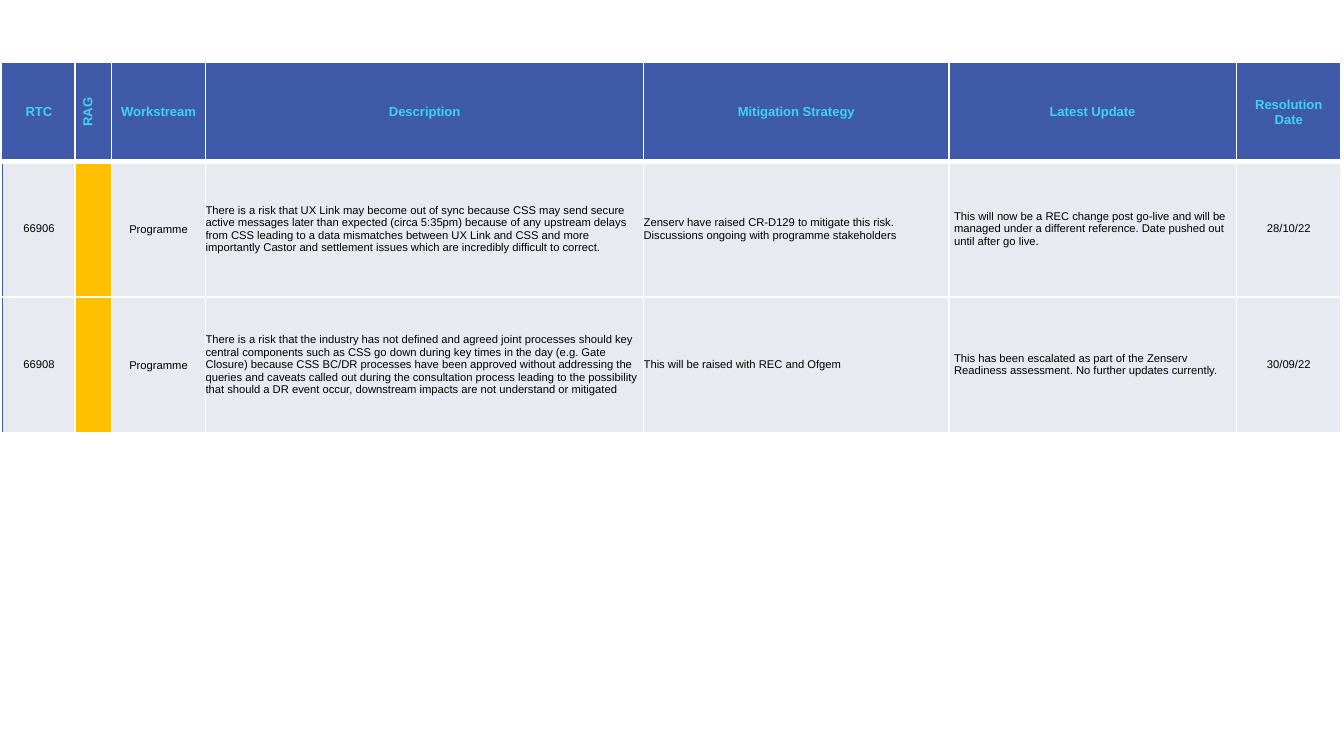
from lxml import etree
from pptx import Presentation
from pptx import util as u
from pptx.dml.color import RGBColor
from pptx.enum import text as t
from pptx.oxml import ns

COLORS = {"header": "3E5AA8", "heading": "40D1F5", "body": "E8EAF1",
          "amber": "FFC000", "ink": "000000", "rule": "FFFFFF"}

# heading, width, alignment of body text, body margins (left, top, right, bottom)
CENTER, LEFT = t.PP_ALIGN.CENTER, t.PP_ALIGN.LEFT
FLUSH, PADDED = (0, 0, 0, 0), (0.04, 0.04, 0.04, 0.04)
COLUMNS = [
    ("RTC", 0.54, CENTER, FLUSH),
    ("RAG", 0.27, CENTER, FLUSH),
    ("Workstream", 0.70, CENTER, (0.01, 0.01, 0.01, 0)),
    ("Description", 3.26, LEFT, FLUSH),
    ("Mitigation Strategy", 2.27, LEFT, FLUSH),
    ("Latest Update", 2.14, LEFT, PADDED),
    ("Resolution\nDate", 0.78, CENTER, FLUSH),
]
RAG = 1
RISKS = [
    ("66906", "", "Programme",
     "There is a risk that UX Link may become out of sync because CSS may send secure "
     "active messages later than expected (circa 5:35pm) because of any upstream delays "
     "from CSS leading to a data mismatches between UX Link and CSS and more importantly "
     "Castor and settlement issues which are incredibly difficult to correct.",
     "Zenserv have raised CR-D129 to mitigate this risk.\n"
     "Discussions ongoing with programme stakeholders",
     "This will now be a REC change post go-live and will be managed under a different "
     "reference. Date pushed out until after go live.",
     "28/10/22"),
    ("66908", "", "Programme",
     "There is a risk that the industry has not defined and agreed joint processes should "
     "key central components such as CSS go down during key times in the day (e.g. Gate "
     "Closure) because CSS BC/DR processes have been approved without addressing the "
     "queries and caveats called out during the consultation process leading to the "
     "possibility that should a DR event occur, downstream impacts are not understand or "
     "mitigated",
     "This will be raised with REC and Ofgem",
     "This has been escalated as part of the Zenserv Readiness assessment. No further "
     "updates currently.",
     "30/09/22"),
]
SLIDE_WIDTH = 10
SLIDE_HEIGHT = SLIDE_WIDTH * 9 / 16
HEADER_HEIGHT, RISK_HEIGHT = 0.73, 1.01


def write(cell, words, size=6, color="ink", bold=False, align=LEFT, margins=FLUSH):
    cell.vertical_anchor = t.MSO_ANCHOR.MIDDLE
    (cell.margin_left, cell.margin_top,
     cell.margin_right, cell.margin_bottom) = map(u.Inches, margins)
    cell.text_frame.text = words
    for paragraph in cell.text_frame.paragraphs:
        paragraph.alignment = align
        for font in [paragraph.font] + [run.font for run in paragraph.runs]:
            font.name, font.size, font.bold = "Arial", u.Pt(size), bold
            font.color.rgb = RGBColor.from_string(COLORS[color])


def paint(cell, fill, borders):
    """Draw borders given as side: (colour, points), then the fill that must follow them."""
    properties = cell._tc.get_or_add_tcPr()
    for side in "LRTB":
        color, points = borders[side]
        line = etree.SubElement(properties, ns.qn("a:ln" + side), w=str(u.Pt(points)))
        solid = etree.SubElement(line, ns.qn("a:solidFill"))
        etree.SubElement(solid, ns.qn("a:srgbClr"), val=COLORS[color])
    cell.fill.solid()
    cell.fill.fore_color.rgb = RGBColor.from_string(COLORS[fill])


def borders_at(row, column):
    thin, edge, thick = ("rule", 1), ("header", 0.5), ("rule", 3)
    return {"L": edge if column == 0 else thin,
            "R": thin,
            "T": {0: edge, 1: thick}.get(row, thin),
            "B": thick if row == 0 else thin}


def main():
    deck = Presentation()
    deck.slide_width, deck.slide_height = u.Inches(SLIDE_WIDTH), u.Inches(SLIDE_HEIGHT)
    slide = deck.slides.add_slide(deck.slide_layouts[6])

    heights = [HEADER_HEIGHT] + [RISK_HEIGHT] * len(RISKS)
    widths = [width for _, width, _, _ in COLUMNS]
    register = slide.shapes.add_table(
        len(heights), len(widths), u.Inches(0.02), u.Inches(0.47),
        u.Inches(sum(widths)), u.Inches(sum(heights))).table
    for row, height in zip(register.rows, heights):
        row.height = u.Inches(height)

    for c, (heading, width, align, margins) in enumerate(COLUMNS):
        register.columns[c].width = u.Inches(width)
        header = register.cell(0, c)
        write(header, heading, size=7, color="heading", bold=True,
              align=CENTER, margins=PADDED)
        paint(header, "header", borders_at(0, c))
        for r, risk in enumerate(RISKS, start=1):
            cell = register.cell(r, c)
            write(cell, risk[c], align=align, margins=margins)
            paint(cell, "amber" if c == RAG else "body", borders_at(r, c))
    register.cell(0, RAG)._tc.get_or_add_tcPr().set("vert", "vert270")

    deck.save("out.pptx")


if __name__ == "__main__":
    main()
